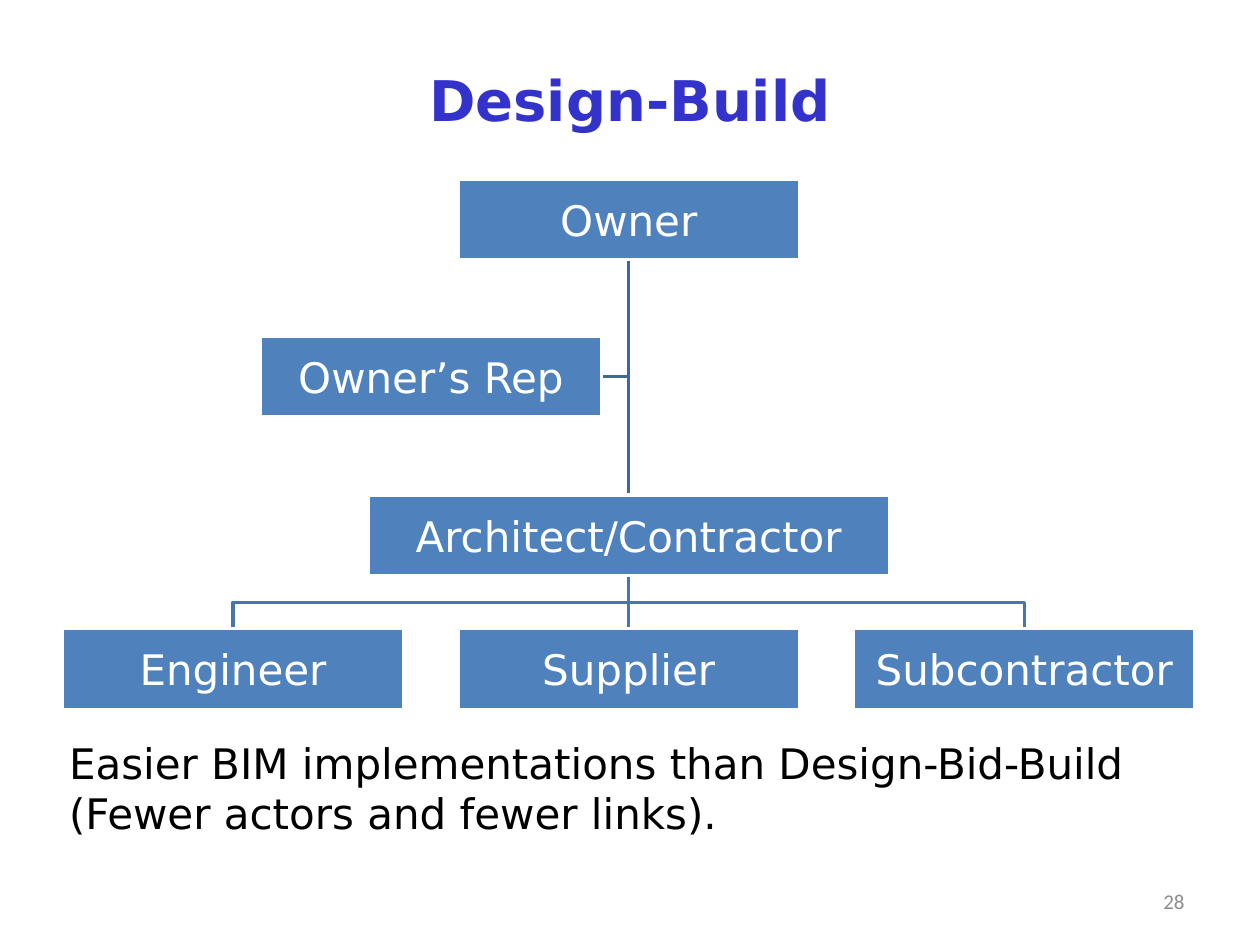
from lxml import etree
from pptx import Presentation
from pptx.dml.color import RGBColor
from pptx.enum.shapes import MSO_CONNECTOR, MSO_SHAPE
from pptx.enum.text import MSO_ANCHOR, PP_ALIGN
from pptx.oxml.ns import qn
from pptx.util import Inches, Pt

STRAIGHT = MSO_CONNECTOR.STRAIGHT
RECTANGLE = MSO_SHAPE.RECTANGLE
MIDDLE = MSO_ANCHOR.MIDDLE
LEFT, CENTER, RIGHT = PP_ALIGN.LEFT, PP_ALIGN.CENTER, PP_ALIGN.RIGHT
FONT = "DejaVu Sans"


def color(hex_string):
    return RGBColor.from_string(hex_string)


def write(shape, text, size, hex_string, align, name=FONT, bold=False):
    shape.text_frame.word_wrap = True
    para = shape.text_frame.paragraphs[0]
    para.text = text
    para.alignment = align
    para.font.size = Pt(size)
    para.font.name = name
    para.font.bold = bold
    para.font.color.rgb = color(hex_string)


deck = Presentation()
deck.slide_width, deck.slide_height = Inches(10), Inches(7.5)
page = deck.slides.add_slide(deck.slide_layouts[5])

title = page.shapes.title
title.left, title.top = Inches(0.5), Inches(0.16)
title.width, title.height = Inches(9), Inches(1.25)
title.text_frame.vertical_anchor = MIDDLE
write(title, "Design-Build", 32, "3333CC", CENTER, bold=True)

box_width, wide_width, box_height = 2.71, 4.14, 0.64
column_step = 3.14
middle_x = 4.99
left_x, right_x = middle_x - column_step, middle_x + column_step
rep_x = middle_x - column_step / 2
owner_y, rep_y, architect_y, team_y = 1.42, 2.67, 3.93, 4.99
owner_bottom = owner_y + box_height
architect_bottom = architect_y + box_height
branch_y = (architect_bottom + team_y) / 2
rep_middle = rep_y + box_height / 2

links = [
    ("3F6797", [(middle_x, owner_bottom), (middle_x, rep_middle),
                (rep_x + box_width / 2, rep_middle)]),
    ("4875AC", [(middle_x, architect_bottom), (middle_x, branch_y),
                (right_x, branch_y), (right_x, team_y)]),
    ("4875AC", [(middle_x, architect_bottom), (middle_x, team_y)]),
    ("4875AC", [(middle_x, architect_bottom), (middle_x, branch_y),
                (left_x, branch_y), (left_x, team_y)]),
    ("3F6797", [(middle_x, owner_bottom), (middle_x, architect_y)]),
]
for line_color, corners in links:
    points = [(Inches(x), Inches(y)) for x, y in corners]
    if len(points) == 2:
        link = page.shapes.add_connector(STRAIGHT, *points[0], *points[1])
        etree.SubElement(link._element.spPr, qn("a:effectLst"))
    else:
        builder = page.shapes.build_freeform(*points[0])
        builder.add_line_segments(points[1:], close=False)
        link = builder.convert_to_shape()
        link.fill.background()
        link.shadow.inherit = False
    link.line.color.rgb = color(line_color)
    link.line.width = Pt(2)

actors = [
    ("Owner", middle_x, owner_y, box_width),
    ("Architect/Contractor", middle_x, architect_y, wide_width),
    ("Engineer", left_x, team_y, box_width),
    ("Supplier", middle_x, team_y, box_width),
    ("Subcontractor", right_x, team_y, box_width),
    ("Owner’s Rep", rep_x, rep_y, box_width),
]
for name, center, top, width in actors:
    box = page.shapes.add_shape(RECTANGLE, Inches(center - width / 2), Inches(top),
                                Inches(width), Inches(box_height))
    box.shadow.inherit = False
    box.fill.solid()
    box.fill.fore_color.rgb = color("4F81BD")
    box.line.color.rgb = color("FFFFFF")
    box.line.width = Pt(2)
    frame = box.text_frame
    frame.vertical_anchor = MIDDLE
    frame.margin_left = frame.margin_right = Inches(0.02)
    frame.margin_top = frame.margin_bottom = Inches(0.02)
    write(box, name, 24, "FFFFFF", CENTER)

remark = page.shapes.add_textbox(Inches(0.45), Inches(5.8), Inches(8.77), Inches(0.91))
write(remark, "Easier BIM implementations than Design-Bid-Build (Fewer actors and fewer links).",
      24, "000000", LEFT)

number = page.shapes.add_textbox(Inches(7.17), Inches(6.95), Inches(2.33), Inches(0.4))
number.text_frame.vertical_anchor = MIDDLE
write(number, "28", 12, "8C8C8C", RIGHT, name="Calibri")

deck.save("out.pptx")
